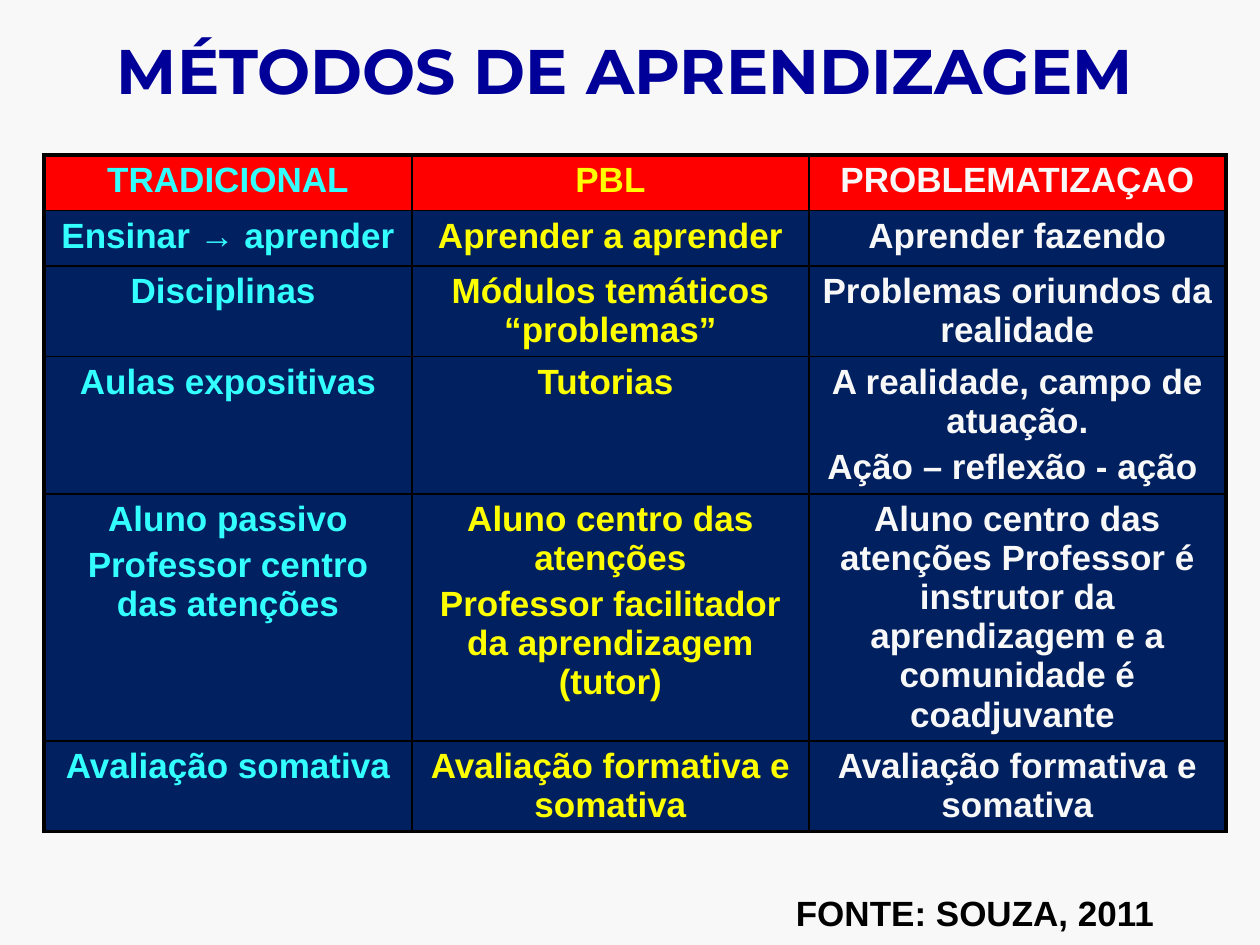
from dataclasses import dataclass

from lxml import etree
from pptx import Presentation
from pptx.dml.color import RGBColor
from pptx.enum.text import MSO_ANCHOR, MSO_AUTO_SIZE, PP_ALIGN
from pptx.oxml.ns import qn
from pptx.util import Emu, Pt

PX = 9144  # 100 px to the inch
CENTER, RIGHT = PP_ALIGN.CENTER, PP_ALIGN.RIGHT
TOP, BOTTOM = MSO_ANCHOR.TOP, MSO_ANCHOR.BOTTOM
GROW, FIXED = MSO_AUTO_SIZE.SHAPE_TO_FIT_TEXT, MSO_AUTO_SIZE.NONE

BACKGROUND = "F8F8F8"
BLACK = "000000"
HEADER_FILL = "FF0000"
BODY_FILL = "002060"
OUTER_BORDER, INNER_BORDER = 2.25, 1


@dataclass
class Label:
    text: str
    left: int
    top: int
    width: int
    height: int
    font_name: str
    size: int
    color: str
    alignment: PP_ALIGN
    anchor: MSO_ANCHOR
    auto_size: MSO_AUTO_SIZE


@dataclass
class Column:
    width: int
    color: str
    cells: list[str]


LABELS = [
    Label("MÉTODOS DE APRENDIZAGEM", 0, -36, 992, 126, "Montserrat", 36,
          "000099", CENTER, BOTTOM, FIXED),
    Label("FONTE: SOUZA, 2011", 603, 703, 323, 44, "Arial", 20,
          BLACK, RIGHT, TOP, GROW),
]

TABLE_LEFT, TABLE_TOP = 35, 123
ROW_HEIGHTS = [44, 44, 72, 109, 196, 71]
COLUMNS = [
    Column(292, "33FFFF", [
        "TRADICIONAL",
        "Ensinar → aprender",
        "Disciplinas ",
        "Aulas expositivas",
        "Aluno passivo\nProfessor centro das atenções",
        "Avaliação somativa",
    ]),
    Column(315, "FFFF00", [
        "PBL",
        "Aprender a aprender",
        "Módulos temáticos “problemas”",
        "Tutorias ",
        "Aluno centro das atenções\n"
        "Professor facilitador da aprendizagem (tutor)",
        "Avaliação formativa e somativa",
    ]),
    Column(331, "F8F8F8", [
        "PROBLEMATIZAÇAO",
        "Aprender fazendo",
        "Problemas oriundos da realidade",
        "A realidade, campo de atuação.\nAção – reflexão - ação ",
        "Aluno centro das atenções Professor é instrutor da aprendizagem "
        "e a comunidade é coadjuvante ",
        "Avaliação formativa e somativa",
    ]),
]


def px(length: int) -> Emu:
    return Emu(length * PX)


def rgb(color: str) -> RGBColor:
    return RGBColor.from_string(color)


def write_text(frame, text: str, font_name: str, size: int, color: str,
               alignment: PP_ALIGN) -> None:
    """Fill a text frame with one bold paragraph per line of text."""
    frame.text = text
    for index, paragraph in enumerate(frame.paragraphs):
        paragraph.alignment = alignment
        if index:
            paragraph.space_before = Pt(size * 0.2)
        font = paragraph.font
        font.name, font.size, font.bold = font_name, Pt(size), True
        font.color.rgb = rgb(color)


def add_label(slide, label: Label) -> None:
    box = slide.shapes.add_textbox(px(label.left), px(label.top),
                                   px(label.width), px(label.height))
    frame = box.text_frame
    frame.word_wrap = True
    frame.auto_size = label.auto_size
    frame.vertical_anchor = label.anchor
    write_text(frame, label.text, label.font_name, label.size, label.color,
               label.alignment)


def add_border(cell, side: str, width: float) -> None:
    properties = cell._tc.get_or_add_tcPr()
    line = etree.SubElement(properties, qn(f"a:ln{side}"), w=str(Pt(width)))
    fill = etree.SubElement(line, qn("a:solidFill"))
    etree.SubElement(fill, qn("a:srgbClr"), val=BLACK)


def add_methods_table(slide) -> None:
    last_row, last_column = len(ROW_HEIGHTS) - 1, len(COLUMNS) - 1
    table = slide.shapes.add_table(
        len(ROW_HEIGHTS), len(COLUMNS), px(TABLE_LEFT), px(TABLE_TOP),
        px(sum(column.width for column in COLUMNS)),
        px(sum(ROW_HEIGHTS))).table
    table.first_row = table.horz_banding = False
    for row, height in zip(table.rows, ROW_HEIGHTS):
        row.height = px(height)
    for column_index, column in enumerate(COLUMNS):
        table.columns[column_index].width = px(column.width)
        for row_index, text in enumerate(column.cells):
            cell = table.cell(row_index, column_index)
            outer_sides = {
                "L": column_index == 0,
                "R": column_index == last_column,
                "T": row_index == 0,
                "B": row_index == last_row,
            }
            for side, is_outer in outer_sides.items():
                add_border(cell, side,
                           OUTER_BORDER if is_outer else INNER_BORDER)
            cell.fill.solid()
            cell.fill.fore_color.rgb = rgb(
                BODY_FILL if row_index else HEADER_FILL)
            write_text(cell.text_frame, text, "Arial", 20, column.color,
                       CENTER)


def main() -> None:
    presentation = Presentation()
    presentation.slide_width, presentation.slide_height = px(1000), px(750)
    slide = presentation.slides.add_slide(presentation.slide_layouts[6])
    slide.background.fill.solid()
    slide.background.fill.fore_color.rgb = rgb(BACKGROUND)
    add_methods_table(slide)
    for label in LABELS:
        add_label(slide, label)
    presentation.save("out.pptx")


if __name__ == "__main__":
    main()
